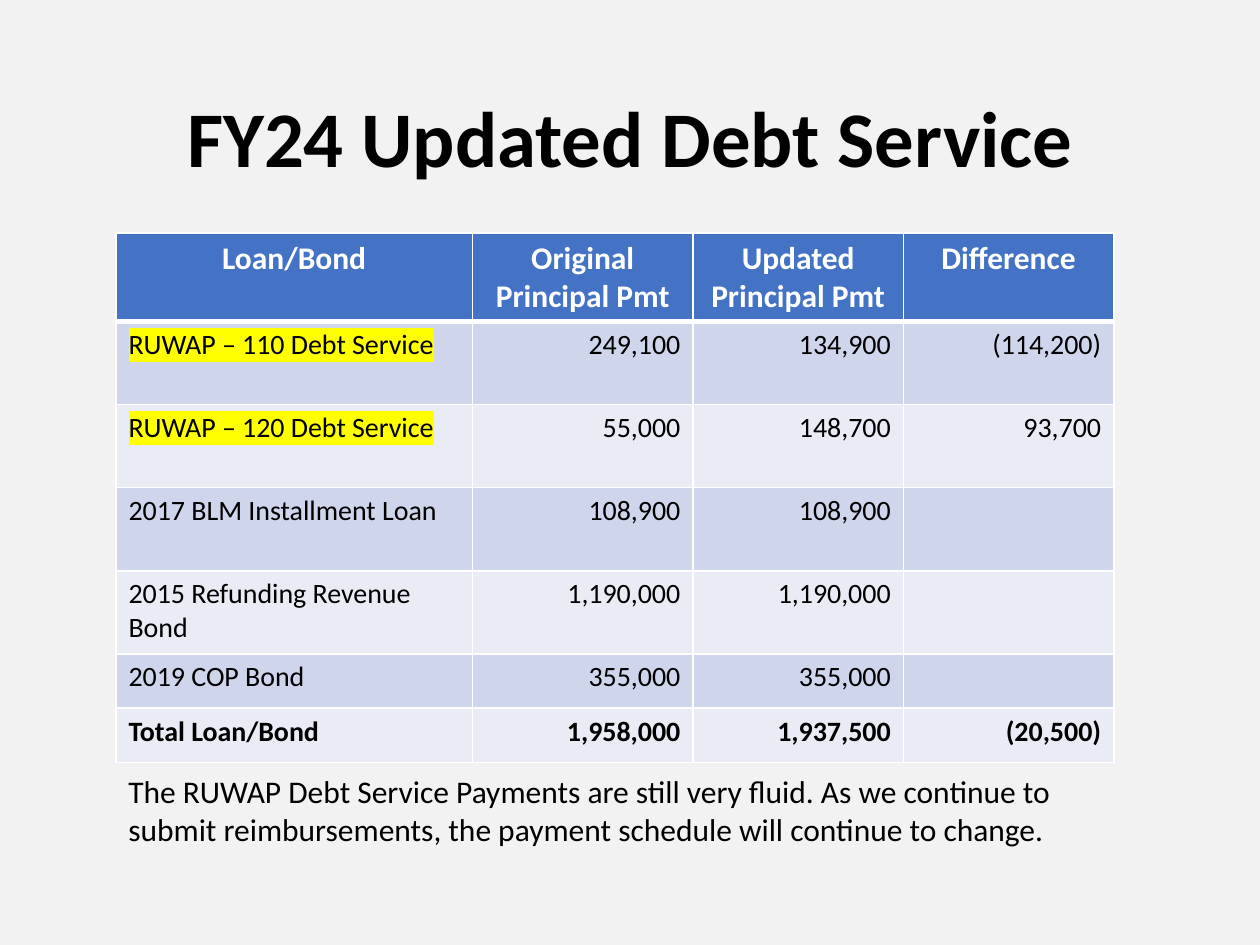
from lxml.etree import SubElement
from pptx import Presentation
from pptx.dml.color import RGBColor
from pptx.enum.text import MSO_ANCHOR, PP_ALIGN
from pptx.oxml.ns import qn
from pptx.util import Inches, Pt

BLACK = RGBColor(0x00, 0x00, 0x00)
WHITE = RGBColor(0xFF, 0xFF, 0xFF)
YELLOW = RGBColor(0xFF, 0xFF, 0x00)
BLUE = RGBColor(0x44, 0x72, 0xC4)
BANDS = (RGBColor(0xCF, 0xD5, 0xEA), RGBColor(0xE9, 0xEB, 0xF5))
PAPER = RGBColor(0xF2, 0xF2, 0xF2)

TITLE = {"size": Pt(45), "bold": True}
HEAD = {"size": Pt(18), "bold": True}
BODY = {"size": Pt(16), "bold": False}
TOTAL = {"size": Pt(16), "bold": True}
NOTE = {"size": Pt(18), "bold": False}

WIDTHS = (2.83, 1.75, 1.67, 1.67)
HEIGHTS = (0.65, 0.66, 0.66, 0.66, 0.66, 0.43, 0.43)
ROWS = (
    ("Loan/Bond", "Original Principal Pmt", "Updated Principal Pmt", "Difference"),
    ("RUWAP – 110 Debt Service", "249,100", "134,900", "(114,200)"),
    ("RUWAP – 120 Debt Service", "55,000", "148,700", "93,700"),
    ("2017 BLM Installment Loan", "108,900", "108,900", ""),
    ("2015 Refunding Revenue Bond", "1,190,000", "1,190,000", ""),
    ("2019 COP Bond", "355,000", "355,000", ""),
    ("Total Loan/Bond", "1,958,000", "1,937,500", "(20,500)"),
)
MARKED = (1, 2)


def write(frame, text, style, align=PP_ALIGN.LEFT, color=BLACK):
    para = frame.paragraphs[0]
    para.alignment = align
    run = para.add_run()
    run.text = text
    for name, value in style.items():
        setattr(run.font, name, value)
    run.font.name = "Calibri"
    run.font.color.rgb = color
    return run


def mark(run, color):
    """Highlight the run; the schema wants it right after the text fill."""
    props = run.font._element if hasattr(run.font, "_element") else run._r.get_or_add_rPr()
    light = SubElement(props, qn("a:highlight"))
    SubElement(light, qn("a:srgbClr"), val=str(color))
    props.find(qn("a:solidFill")).addnext(light)


def edge(cell, side, width, color=WHITE):
    line = SubElement(cell._tc.get_or_add_tcPr(), qn(f"a:ln{side}"), w=str(Pt(width)))
    fill = SubElement(line, qn("a:solidFill"))
    SubElement(fill, qn("a:srgbClr"), val=str(color))


def add_text(slide, box, text, style, align=PP_ALIGN.LEFT, anchor=MSO_ANCHOR.TOP):
    frame = slide.shapes.add_textbox(*map(Inches, box)).text_frame
    frame.word_wrap = True
    frame.vertical_anchor = anchor
    write(frame, text, style, align)
    return frame


def fill_cell(cell, row, col, text):
    head = row == 0
    for side in "LRTB":
        thick = (head and side == "B") or (row == 1 and side == "T")
        edge(cell, side, 3 if thick else 1)
    cell.fill.solid()
    cell.fill.fore_color.rgb = BLUE if head else BANDS[(row - 1) % 2]
    if not text:
        return
    if head:
        write(cell.text_frame, text, HEAD, PP_ALIGN.CENTER, WHITE)
        return
    style = TOTAL if row == len(ROWS) - 1 else BODY
    run = write(cell.text_frame, text, style, PP_ALIGN.RIGHT if col else PP_ALIGN.LEFT)
    if col == 0 and row in MARKED:
        mark(run, YELLOW)


def add_debts(slide, left, top):
    box = map(Inches, (left, top, sum(WIDTHS), sum(HEIGHTS)))
    table = slide.shapes.add_table(len(ROWS), len(WIDTHS), *box).table
    for column, width in zip(table.columns, WIDTHS):
        column.width = Inches(width)
    for row, (height, texts) in enumerate(zip(HEIGHTS, ROWS)):
        table.rows[row].height = Inches(height)
        for col, text in enumerate(texts):
            fill_cell(table.cell(row, col), row, col, text)


def main():
    deck = Presentation()
    deck.slide_width, deck.slide_height = Inches(10), Inches(7.5)
    slide = deck.slides.add_slide(deck.slide_layouts[6])
    slide.background.fill.solid()
    slide.background.fill.fore_color.rgb = PAPER

    title = add_text(slide, (0.69, 0.4, 8.62, 1.45), "FY24 Updated Debt Service",
                     TITLE, PP_ALIGN.CENTER, MSO_ANCHOR.MIDDLE)
    title.paragraphs[0].line_spacing = 0.9
    add_debts(slide, 0.92, 1.85)
    add_text(slide, (0.92, 6.08, 8, 0.71),
             "The RUWAP Debt Service Payments are still very fluid. As we continue to "
             "submit reimbursements, the payment schedule will continue to change.", NOTE)
    deck.save("out.pptx")


if __name__ == "__main__":
    main()
